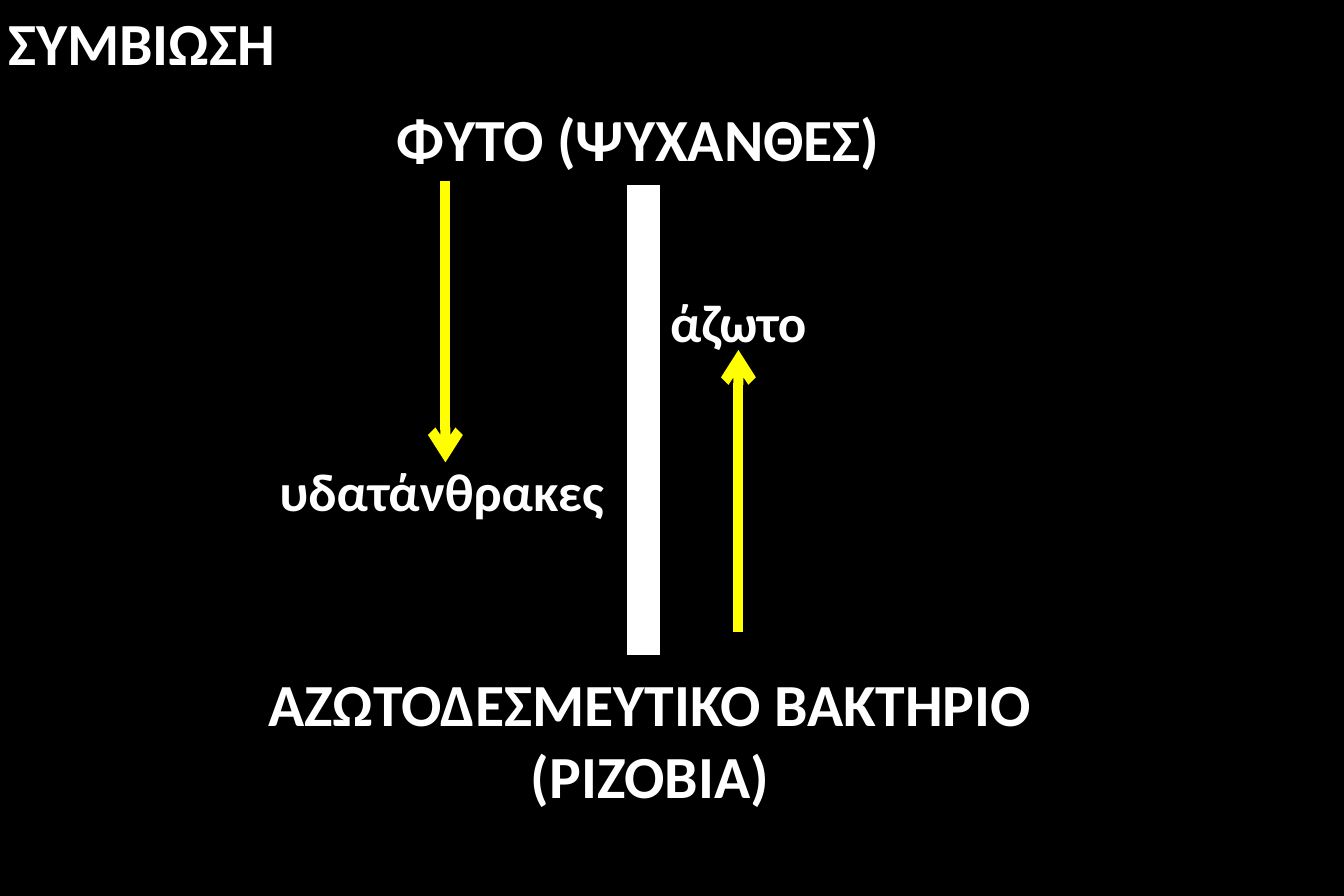
from dataclasses import dataclass

from lxml import etree
from pptx import Presentation
from pptx import util as u
from pptx.dml.color import RGBColor
from pptx.enum import shapes, text
from pptx.oxml.ns import qn


@dataclass(frozen=True)
class Theme:
    font: str = "Calibri"
    background: RGBColor = RGBColor(0, 0, 0)
    ink: RGBColor = RGBColor(255, 255, 255)
    flow: RGBColor = RGBColor(255, 255, 0)
    partner_size: int = 36
    substance_size: int = 32
    bond_width: int = 20
    flow_width: int = 6


THEME = Theme()
CENTER, LEFT = text.PP_ALIGN.CENTER, text.PP_ALIGN.LEFT

# Lengths in cm; boxes are left, top, width, height.
TITLE = ("ΣΥΜΒΙΩΣΗ", (-0.08, 0, 6.25, 1.8))
LABELS = [
    (["ΦΥΤΟ (ΨΥΧΑΝΘΕΣ)"], (8.18, 2.03, 10.92, 1.8), THEME.partner_size, LEFT),
    (["ΑΖΩΤΟΔΕΣΜΕΥΤΙΚΟ ΒΑΚΤΗΡΙΟ", "(ΡΙΖΟΒΙΑ)"],
     (5.36, 14.05, 16.92, 3.33), THEME.partner_size, CENTER),
    (["άζωτο"], (14, 6.02, 3.45, 1.63), THEME.substance_size, LEFT),
    (["υδατάνθρακες"], (5.69, 9.63, 7.47, 1.63), THEME.substance_size, LEFT),
]
# x, start y, end y
BOND = (13.69, 3.94, 13.92)
FLOWS = [(9.47, 3.84, 9.83), (15.7, 13.44, 7.44)]


def write(box, lines, size, align):
    frame = box.text_frame
    frame.text = "\n".join(lines)
    frame.word_wrap = False
    frame.auto_size = text.MSO_AUTO_SIZE.SHAPE_TO_FIT_TEXT
    frame.vertical_anchor = text.MSO_ANCHOR.TOP
    for paragraph in frame.paragraphs:
        paragraph.alignment = align
        font = paragraph.font
        font.name, font.size, font.bold = THEME.font, u.Pt(size), True
        font.color.rgb = THEME.ink


def draw_vertical(slide, x, start, end, color, width):
    line = slide.shapes.add_connector(
        shapes.MSO_CONNECTOR.STRAIGHT, u.Cm(x), u.Cm(start), u.Cm(x), u.Cm(end))
    line.line.color.rgb = color
    line.line.width = u.Pt(width)
    etree.SubElement(line._element.spPr, qn("a:effectLst"))
    return line


def main():
    prs = Presentation()
    prs.slide_width, prs.slide_height = u.Cm(28.575), u.Cm(19.05)
    slide = prs.slides.add_slide(prs.slide_layouts[5])
    slide.background.fill.solid()
    slide.background.fill.fore_color.rgb = THEME.background

    heading, place = TITLE
    title = slide.shapes.title
    title.left, title.top, title.width, title.height = map(u.Cm, place)
    write(title, [heading], THEME.partner_size, LEFT)

    draw_vertical(slide, *BOND, THEME.ink, THEME.bond_width)
    for flow in FLOWS:
        arrow = draw_vertical(slide, *flow, THEME.flow, THEME.flow_width)
        etree.SubElement(arrow.line._get_or_add_ln(), qn("a:tailEnd"), type="arrow")

    for lines, place, size, align in LABELS:
        write(slide.shapes.add_textbox(*map(u.Cm, place)), lines, size, align)

    prs.save("out.pptx")


if __name__ == "__main__":
    main()
